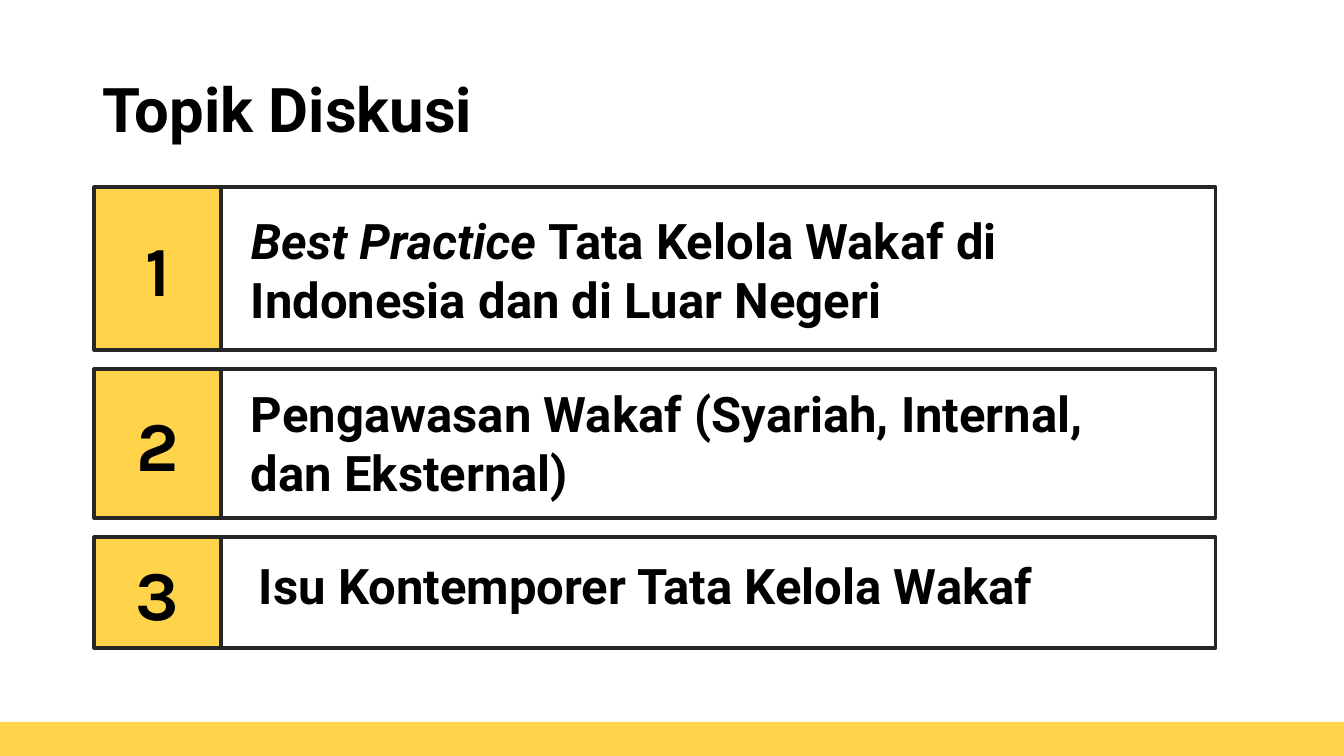
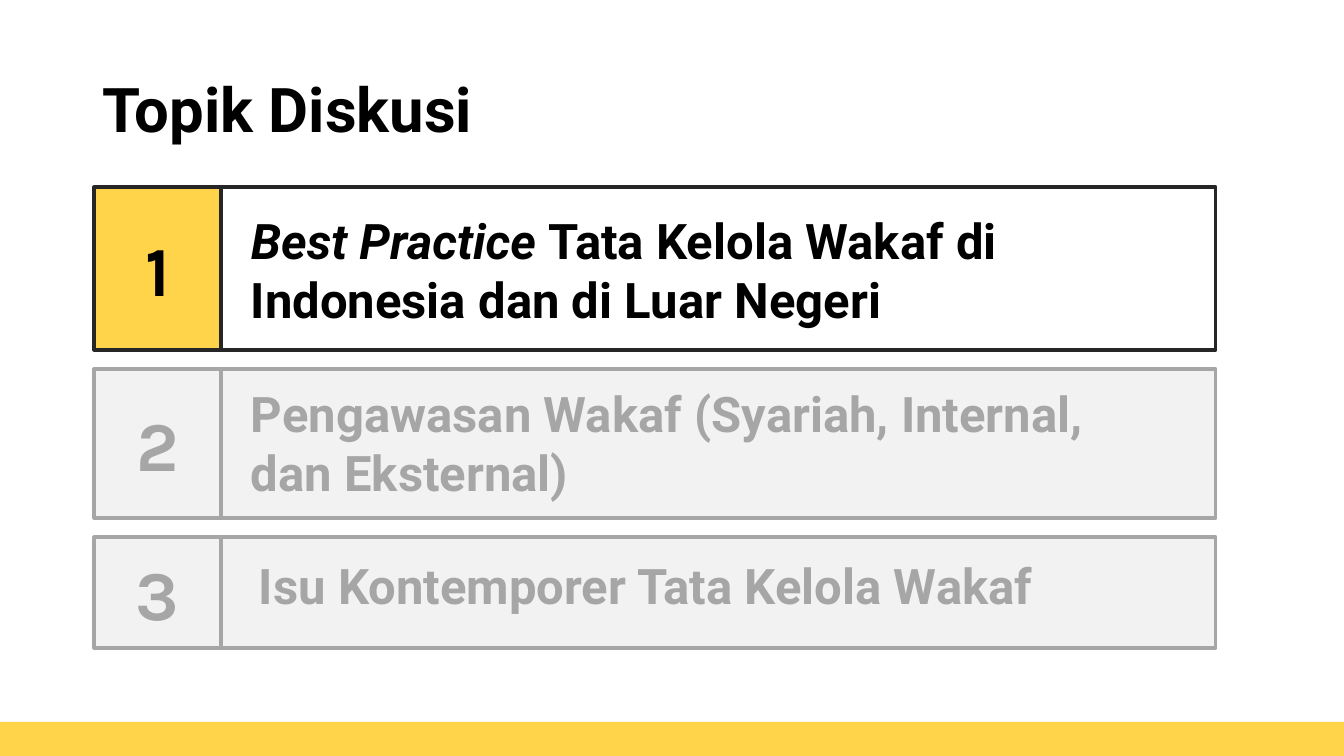
from pptx import Presentation
from pptx import util as u
from pptx.dml.color import RGBColor
from pptx.enum import shapes, text

PX = u.Inches(1) / 100.8
WIDTH, HEIGHT = 1344, 756
LIST_LEFT, LIST_TOP, ROW_GAP = 94, 187, 19
BADGE_WIDTH, PANEL_WIDTH = 127, 995

YELLOW, WHITE, BLACK = "FFD44B", "FFFFFF", "000000"
ACTIVE = {"badge": YELLOW, "panel": WHITE, "line": "262626", "ink": BLACK}
MUTED = {"badge": "F2F2F2", "panel": "F2F2F2", "line": "A6A6A6", "ink": "A6A6A6"}

TOPICS = [
    {"height": 163, "label": (241, 206, 956, 129),
     "runs": [("Best Practice ", True),
              ("Tata Kelola Wakaf di Indonesia dan di Luar Negeri", False)]},
    {"height": 149, "label": (241, 379, 935, 129),
     "runs": [("Pengawasan Wakaf (Syariah, Internal, dan Eksternal)", False)]},
    {"height": 111, "label": (249, 551, 934, 70),
     "runs": [("Isu Kontemporer Tata Kelola Wakaf", False)]},
]


def px(length):
    return u.Emu(round(length * PX))


def color(value):
    return RGBColor.from_string(value)


class Deck:
    heading_font = "Roboto"
    number_font = "Karla"

    def __init__(self):
        self.prs = Presentation()
        self.prs.slide_width, self.prs.slide_height = px(WIDTH), px(HEIGHT)
        self.slide = None

    def new_slide(self, heading):
        self.slide = self.prs.slides.add_slide(self.prs.slide_layouts[6])
        self.rect((0, 722, WIDTH, 34), YELLOW)
        title = self.text_box((93, 40, 1159, 146), [(heading, False)], 44, BLACK)
        title.vertical_anchor = text.MSO_ANCHOR.MIDDLE
        title.paragraphs[0].line_spacing = 0.9

    def rect(self, box, fill, line=None):
        shape = self.slide.shapes.add_shape(
            shapes.MSO_SHAPE.RECTANGLE, *map(px, box))
        shape.shadow.inherit = False
        shape.fill.solid()
        shape.fill.fore_color.rgb = color(fill)
        if line:
            shape.line.color.rgb = color(line)
            shape.line.width = u.Pt(2.25)
        else:
            shape.line.fill.background()
        return shape

    def add_runs(self, paragraph, runs, size, ink, font):
        for words, italic in runs:
            run = paragraph.add_run()
            run.text = words
            run.font.name = font
            run.font.size = u.Pt(size)
            run.font.bold = True
            run.font.italic = italic
            run.font.color.rgb = color(ink)

    def text_box(self, box, runs, size, ink):
        frame = self.slide.shapes.add_textbox(*map(px, box)).text_frame
        frame.word_wrap = True
        self.add_runs(frame.paragraphs[0], runs, size, ink, self.heading_font)
        return frame

    def badge(self, box, number, look):
        frame = self.rect(box, look["badge"], look["line"]).text_frame
        frame.vertical_anchor = text.MSO_ANCHOR.MIDDLE
        paragraph = frame.paragraphs[0]
        paragraph.alignment = text.PP_ALIGN.CENTER
        self.add_runs(paragraph, [(str(number), False)], 50, look["ink"],
                      self.number_font)

    def topic(self, number, top, topic, look):
        height = topic["height"]
        self.badge((LIST_LEFT, top, BADGE_WIDTH, height), number, look)
        self.rect((LIST_LEFT + BADGE_WIDTH, top, PANEL_WIDTH, height),
                  look["panel"], look["line"])
        label = self.text_box(topic["label"], topic["runs"], 35, look["ink"])
        label.auto_size = text.MSO_AUTO_SIZE.SHAPE_TO_FIT_TEXT

    def agenda(self, active_numbers):
        self.new_slide("Topik Diskusi")
        top = LIST_TOP
        for number, topic in enumerate(TOPICS, 1):
            look = ACTIVE if number in active_numbers else MUTED
            self.topic(number, top, topic, look)
            top += topic["height"] + ROW_GAP


def main():
    deck = Deck()
    deck.agenda({1, 2, 3})
    deck.agenda({1})
    deck.prs.save("out.pptx")


if __name__ == "__main__":
    main()
